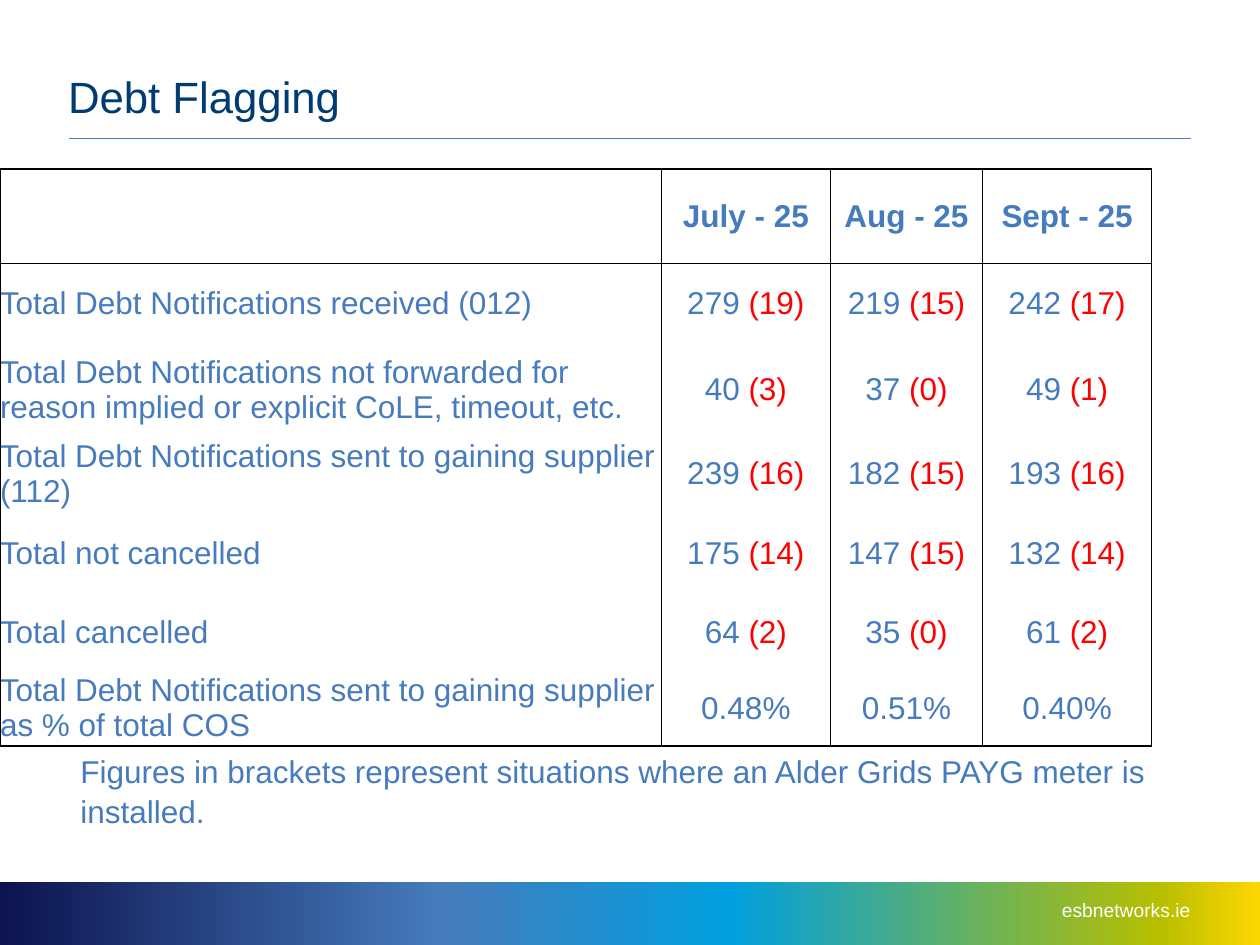
from lxml.etree import SubElement
from pptx import Presentation
from pptx.dml.color import RGBColor
from pptx.enum.shapes import MSO_CONNECTOR, MSO_SHAPE
from pptx.enum.text import MSO_ANCHOR, PP_ALIGN
from pptx.oxml import parse_xml
from pptx.oxml.ns import nsdecls, qn
from pptx.util import Inches, Pt

BLUE = RGBColor(0x46, 0x7B, 0xBD)
NAVY = RGBColor(0x00, 0x3C, 0x71)
RED = RGBColor(0xFF, 0x00, 0x00)
BLACK = RGBColor(0x00, 0x00, 0x00)
WHITE = RGBColor(0xFF, 0xFF, 0xFF)
BAND_STOPS = [
    (0, RGBColor(0x0D, 0x13, 0x4F)),
    (35, RGBColor(0x46, 0x7B, 0xBC)),
    (58, RGBColor(0x00, 0x9F, 0xDF)),
    (92, RGBColor(0xB6, 0xBF, 0x00)),
    (100, RGBColor(0xFF, 0xD6, 0x00)),
]

COLUMN_WIDTHS = [5.25, 1.34, 1.21, 1.34]
ROW_HEIGHTS = [0.75, 0.64, 0.73, 0.59, 0.66, 0.6, 0.59]
ROWS = [
    ["", "July - 25", "Aug - 25", "Sept - 25"],
    ["Total Debt Notifications received (012)", ("279", " (19)"), ("219", " (15)"), ("242", " (17)")],
    ["Total Debt Notifications not forwarded for reason implied or explicit CoLE, timeout, etc.",
     ("40", " (3)"), ("37", " (0)"), ("49", " (1)")],
    ["Total Debt Notifications sent to gaining supplier (112)",
     ("239", " (16)"), ("182", " (15)"), ("193", " (16)")],
    ["Total not cancelled", ("175", " (14)"), ("147", " (15)"), ("132", " (14)")],
    ["Total cancelled", ("64", " (2)"), ("35", " (0)"), ("61", " (2)")],
    ["Total Debt Notifications sent to gaining supplier as % of total COS", "0.48%", "0.51%", "0.40%"],
]


def format_font(font, size, color, bold=False):
    font.name = "Arial"
    font.size = Pt(size)
    font.color.rgb = color
    font.bold = bold


def set_insets(target, left, top, right, bottom):
    target.margin_left = Inches(left)
    target.margin_top = Inches(top)
    target.margin_right = Inches(right)
    target.margin_bottom = Inches(bottom)


def add_text(page, box, text, size, color):
    shape = page.shapes.add_textbox(*map(Inches, box))
    frame = shape.text_frame
    frame.word_wrap = True
    frame.text = text
    format_font(frame.paragraphs[0].runs[0].font, size, color)
    return frame


def add_footer(page, box):
    left, top, width, height = box
    band = page.shapes.add_shape(MSO_SHAPE.RECTANGLE, *map(Inches, box))
    band.shadow.inherit = False
    band.line.fill.background()
    band.fill.gradient()
    band.fill.gradient_angle = 0
    stops = band._element.spPr.find(qn("a:gradFill")).find(qn("a:gsLst"))
    for stop in list(stops):
        stops.remove(stop)
    for position, color in BAND_STOPS:
        stop = SubElement(stops, qn("a:gs"), pos=str(position * 1000))
        SubElement(stop, qn("a:srgbClr"), val=str(color))

    frame = add_text(page, (left + width - 2.39, top + 0.08, 1.84, 0.29), "esbnetworks.ie", 11, WHITE)
    set_insets(frame, 0.1, 0.05, 0, 0.05)
    frame.paragraphs[0].alignment = PP_ALIGN.RIGHT


def add_title(page, box):
    title = page.shapes.title
    title.left, title.top, title.width, title.height = map(Inches, box)
    frame = title.text_frame
    frame.text = "Debt Flagging"
    frame.vertical_anchor = MSO_ANCHOR.BOTTOM
    set_insets(frame, 0, 0.05, 0, 0.05)
    para = frame.paragraphs[0]
    para.alignment = PP_ALIGN.LEFT
    para.line_spacing = Pt(48)
    format_font(para.runs[0].font, 25, NAVY)


def add_rule(page, left, top, width):
    rule = page.shapes.add_connector(
        MSO_CONNECTOR.STRAIGHT, Inches(left), Inches(top), Inches(left + width), Inches(top))
    rule.line.color.rgb = BLUE
    rule.line.width = Pt(1)
    SubElement(rule._element.spPr, qn("a:effectLst"))


def set_borders(cell, sides):
    properties = cell._tc.get_or_add_tcPr()
    for side in "LRTB":
        if side in sides:
            fill = f'<a:solidFill><a:srgbClr val="{BLACK}"/></a:solidFill>'
        else:
            fill = "<a:noFill/>"
        properties.append(parse_xml(f'<a:ln{side} {nsdecls("a")} w="{Pt(1)}">{fill}</a:ln{side}>'))


def fill_cell(cell, content, is_header, is_label):
    cell.vertical_anchor = MSO_ANCHOR.MIDDLE
    set_insets(cell, 0, 0, 0, 0)
    para = cell.text_frame.paragraphs[0]
    para.alignment = PP_ALIGN.LEFT if is_label else PP_ALIGN.CENTER
    parts = content if isinstance(content, tuple) else (content,)
    for text, color in zip(parts, (BLUE, RED)):
        if text:
            span = para.add_run()
            span.text = text
            format_font(span.font, 18, color, is_header)


def add_debt_table(page, box):
    frame = page.shapes.add_table(len(ROWS), len(COLUMN_WIDTHS), *map(Inches, box))
    table = frame.table
    table.first_row = False
    table.horz_banding = False
    for column, width in zip(table.columns, COLUMN_WIDTHS):
        column.width = Inches(width)
    for row, height in zip(table.rows, ROW_HEIGHTS):
        row.height = Inches(height)
    edges = {0: "LRTB", 1: "LRT", len(ROWS) - 1: "LRB"}
    for row_index, contents in enumerate(ROWS):
        for column_index, content in enumerate(contents):
            cell = table.cell(row_index, column_index)
            fill_cell(cell, content, row_index == 0, column_index == 0)
            set_borders(cell, edges.get(row_index, "LR"))
            cell.fill.background()


def add_note(page, box):
    text = "Figures in brackets represent situations where an Alder Grids PAYG meter is installed."
    frame = add_text(page, box, text, 18, BLUE)
    frame.paragraphs[0].line_spacing = 1.06


def main():
    deck = Presentation()
    deck.slide_width = Inches(10)
    deck.slide_height = Inches(7.5)
    page = deck.slides.add_slide(deck.slide_layouts[5])
    add_footer(page, (0, 7, 10, 0.5))
    add_rule(page, 0.55, 1.1, 8.9)
    add_title(page, (0.54, 0.24, 7.45, 0.78))
    add_debt_table(page, (0, 1.34, 9.13, 4.58))
    add_note(page, (0.54, 5.9, 9, 0.71))
    deck.save("out.pptx")


if __name__ == "__main__":
    main()
